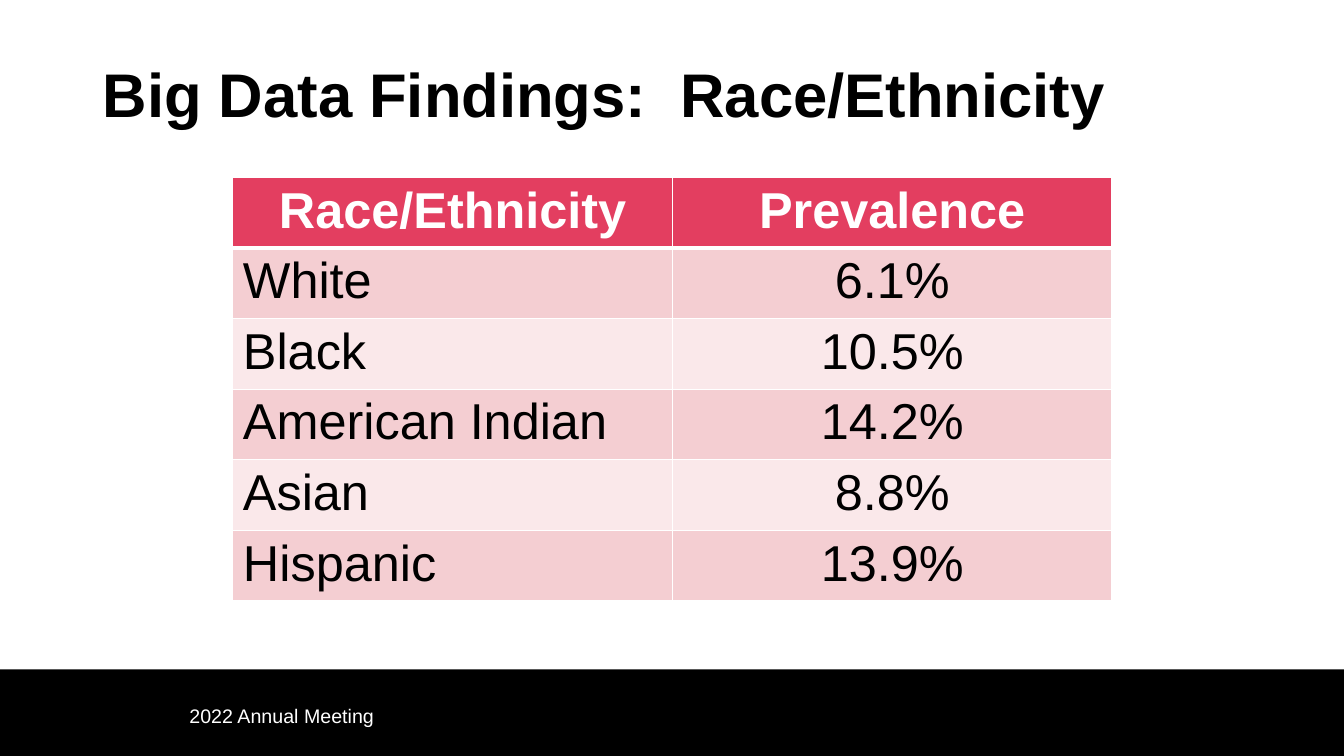
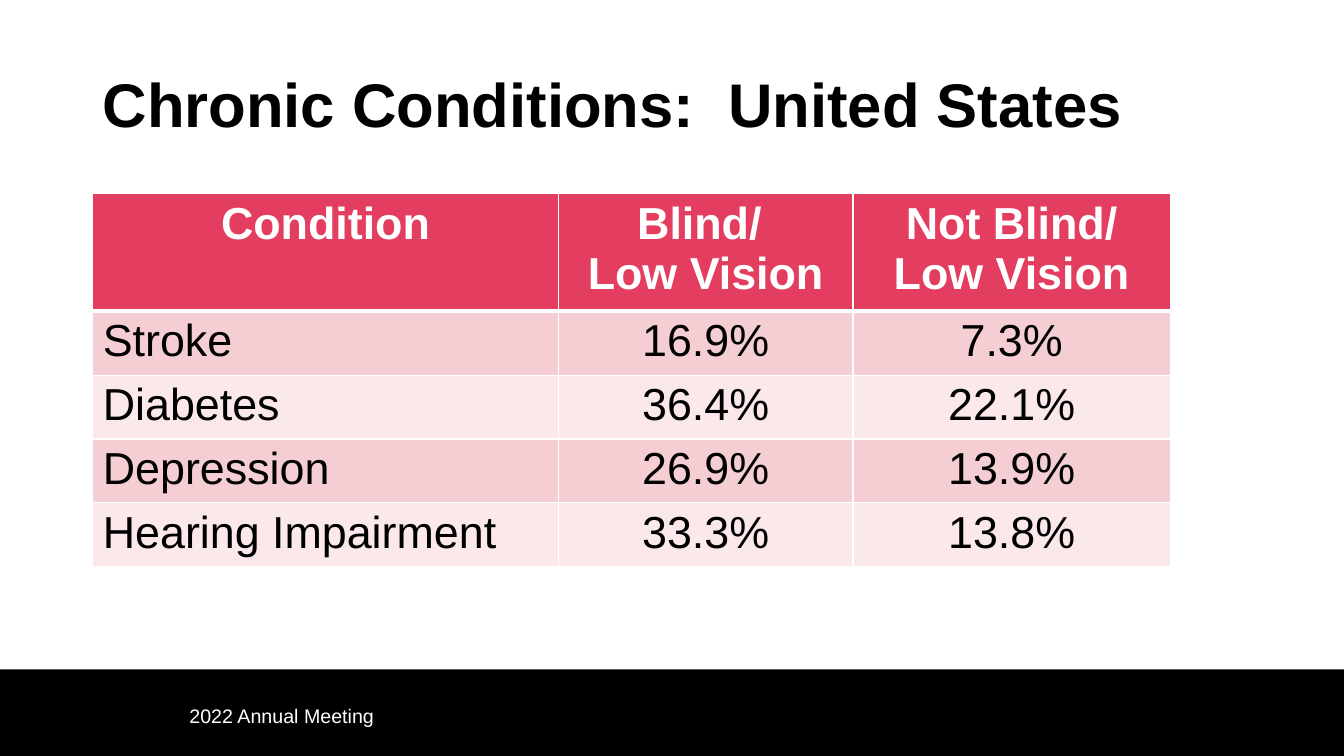
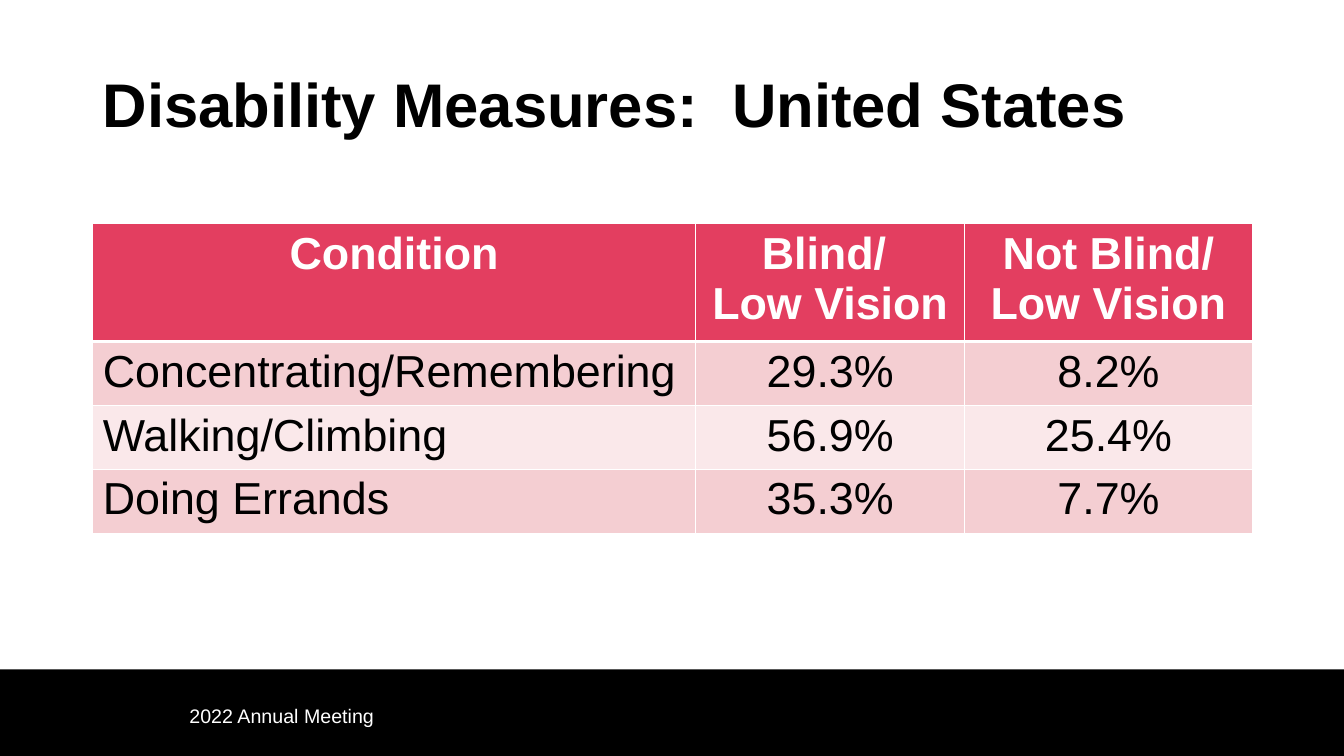
from dataclasses import dataclass

from lxml import etree
from pptx import Presentation
from pptx import util as u
from pptx.dml.color import RGBColor
from pptx.enum import shapes, text
from pptx.oxml.ns import qn

FONT = "Arial"
BLACK, WHITE = "000000", "FFFFFF"
HEADER = "E33E60"
BANDS = ("F4CED2", "FAE8EA")
SLIDE_W, SLIDE_H = 13.33, 7.5
FOOTER_TOP = 6.64
LEFT, CENTER = text.PP_ALIGN.LEFT, text.PP_ALIGN.CENTER
VISION_HEADER = ("Condition", "Blind/ \nLow Vision", "Not Blind/ Low Vision")


@dataclass(frozen=True)
class TableSlide:
    title: str
    title_top: float
    left: float
    top: float
    columns: tuple[float, ...]
    header_height: float
    row_height: float
    size: int
    rows: tuple[tuple[str, ...], ...]


SLIDES = (
    TableSlide(
        "Big Data Findings:  Race/Ethnicity", 0.4, 2.31, 1.76, (4.36, 4.36), 0.66, 0.66, 36,
        (
            ("Race/Ethnicity", "Prevalence"),
            ("White", "6.1%"),
            ("Black", "10.5%"),
            ("American Indian", "14.2%"),
            ("Asian", "8.8%"),
            ("Hispanic", "13.9%"),
        ),
    ),
    TableSlide(
        "Chronic Conditions:  United States", 0.5, 0.92, 1.92, (4.62, 2.92, 3.15), 1.09, 0.6, 32,
        (
            VISION_HEADER,
            ("Stroke", "16.9%", "7.3%"),
            ("Diabetes", "36.4%", "22.1%"),
            ("Depression", "26.9%", "13.9%"),
            ("Hearing Impairment", "33.3%", "13.8%"),
        ),
    ),
    TableSlide(
        "Disability Measures:  United States", 0.5, 0.92, 2.22, (5.98, 2.67, 2.85), 1.09, 0.6, 32,
        (
            VISION_HEADER,
            ("Concentrating/Remembering", "29.3%", "8.2%"),
            ("Walking/Climbing", "56.9%", "25.4%"),
            ("Doing Errands", "35.3%", "7.7%"),
        ),
    ),
)


def rgb(color: str) -> RGBColor:
    return RGBColor.from_string(color)


def write(tf, content: str, *, size: int, color: str = BLACK, bold: bool = False,
          align=LEFT, spacing: float | None = None) -> None:
    """Write one paragraph for each line of content."""
    for i, line in enumerate(content.split("\n")):
        p = tf.add_paragraph() if i else tf.paragraphs[0]
        p.alignment = align
        p.line_spacing = spacing
        r = p.add_run()
        r.text = line
        r.font.name = FONT
        r.font.size = u.Pt(size)
        r.font.bold = bold
        r.font.color.rgb = rgb(color)


def add_text_box(s, left: float, top: float, width: float, height: float):
    sp = s.shapes.add_textbox(*map(u.Inches, (left, top, width, height)))
    sp.text_frame.word_wrap = True
    return sp.text_frame


def add_footer(s) -> None:
    band = s.shapes.add_shape(
        shapes.MSO_SHAPE.RECTANGLE, 0, u.Inches(FOOTER_TOP),
        u.Inches(SLIDE_W), u.Inches(SLIDE_H - FOOTER_TOP))
    band.shadow.inherit = False
    band.fill.solid()
    band.fill.fore_color.rgb = rgb(BLACK)
    band.line.fill.background()
    tf = add_text_box(s, 1.78, 6.93, 4.25, 0.34)
    tf.auto_size = text.MSO_AUTO_SIZE.SHAPE_TO_FIT_TEXT
    write(tf, "2022 Annual Meeting", size=14, color=WHITE)


def add_title(s, title: str, top: float) -> None:
    tf = add_text_box(s, 0.92, top, 11.5, 1.14)
    tf.vertical_anchor = text.MSO_ANCHOR.MIDDLE
    write(tf, title, size=44, bold=True, spacing=0.9)


def set_borders(cell, *, top: int = 1, bottom: int = 1) -> None:
    """Draw white cell borders with widths in points."""
    tc_pr = cell._tc.get_or_add_tcPr()
    for side, width in (("L", 1), ("R", 1), ("T", top), ("B", bottom)):
        ln = etree.SubElement(tc_pr, qn(f"a:ln{side}"), w=str(u.Pt(width)))
        fill = etree.SubElement(ln, qn("a:solidFill"))
        etree.SubElement(fill, qn("a:srgbClr"), val=WHITE)


def add_table(s, data: TableSlide) -> None:
    heights = [data.header_height] + [data.row_height] * (len(data.rows) - 1)
    table = s.shapes.add_table(
        len(heights), len(data.columns), u.Inches(data.left), u.Inches(data.top),
        u.Inches(sum(data.columns)), u.Inches(sum(heights))).table
    for column, width in zip(table.columns, data.columns):
        column.width = u.Inches(width)
    for i, (row, height, values) in enumerate(zip(table.rows, heights, data.rows)):
        row.height = u.Inches(height)
        is_header = i == 0
        for j, (cell, value) in enumerate(zip(row.cells, values)):
            set_borders(cell, top=3 if i == 1 else 1, bottom=3 if is_header else 1)
            cell.fill.solid()
            cell.fill.fore_color.rgb = rgb(HEADER if is_header else BANDS[(i - 1) % 2])
            write(cell.text_frame, value, size=data.size, bold=is_header,
                  color=WHITE if is_header else BLACK,
                  align=CENTER if is_header or j else LEFT)


def main() -> None:
    prs = Presentation()
    prs.slide_width, prs.slide_height = u.Inches(SLIDE_W), u.Inches(SLIDE_H)
    for data in SLIDES:
        s = prs.slides.add_slide(prs.slide_layouts[6])
        add_footer(s)
        add_title(s, data.title, data.title_top)
        add_table(s, data)
    prs.save("out.pptx")


if __name__ == "__main__":
    main()
